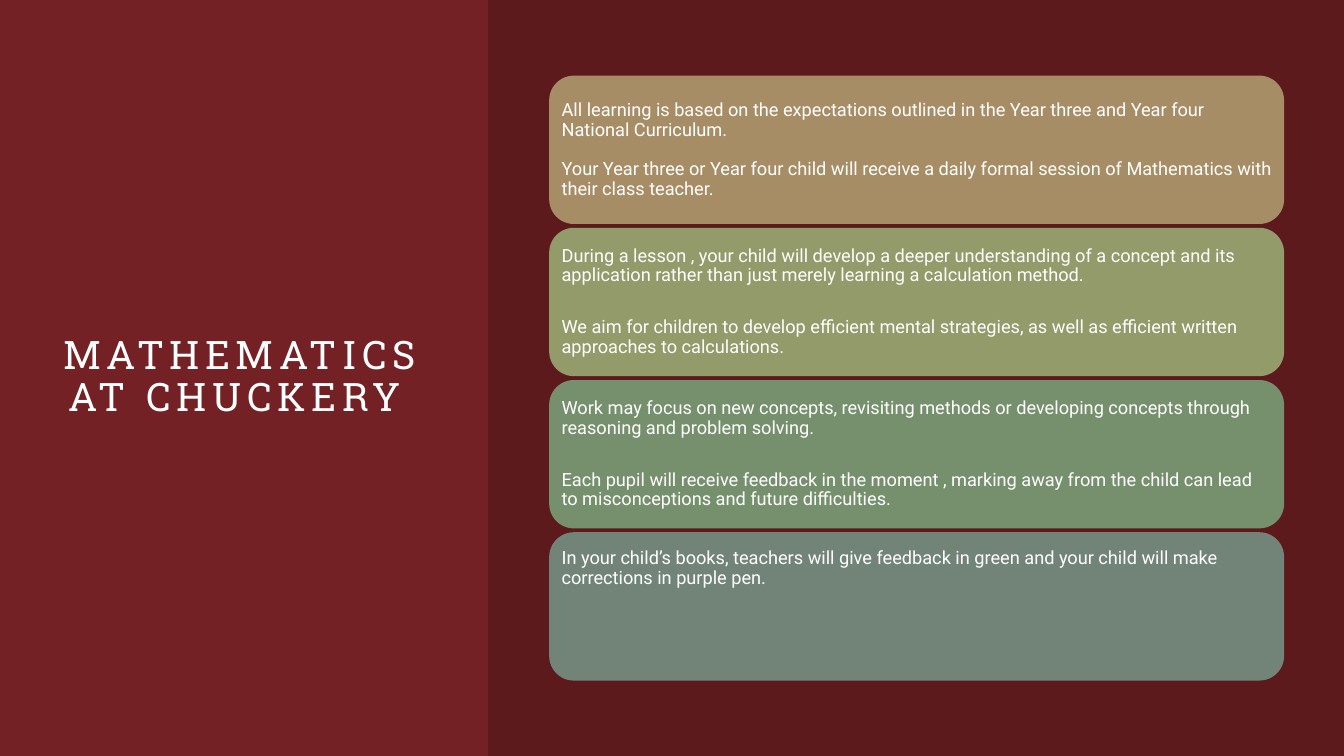
"""Build the slide on how mathematics is taught at Chuckery."""
from lxml.etree import SubElement
from pptx import Presentation
from pptx.dml.color import RGBColor
from pptx.enum.shapes import MSO_SHAPE
from pptx.enum.text import MSO_ANCHOR, PP_ALIGN
from pptx.oxml.ns import qn
from pptx.util import Pt

COLORS = {
    "background": "732124",
    "panel": "000000",
    "text": "FFFFFF",
    "curriculum": "A68D65",
    "lesson": "929B69",
    "feedback": "768F6D",
    "books": "728377",
}
CARDS = [
    ("curriculum", MSO_ANCHOR.MIDDLE, 3.75, 14, [
        "All learning is based on the expectations outlined in the Year three and Year four National Curriculum.",
        "Your Year three or Year four child will receive a daily formal session of Mathematics with their class teacher.",
    ]),
    ("lesson", MSO_ANCHOR.MIDDLE, 3.75, 23, [
        "During a lesson , your child will develop a deeper understanding of a concept and its application "
        "rather than just merely learning a calculation method.",
        "We aim for children to develop efficient mental strategies, as well as efficient written approaches "
        "to calculations.",
    ]),
    ("feedback", MSO_ANCHOR.MIDDLE, 3.75, 23, [
        "Work may focus on new concepts, revisiting methods or developing concepts through reasoning "
        "and problem solving.",
        "Each pupil will receive feedback in the moment , marking away from the child can lead "
        "to misconceptions and future difficulties.",
    ]),
    ("books", MSO_ANCHOR.TOP, 7, 0, [
        "In your child’s books, teachers will give feedback in green and your child will make corrections "
        "in purple pen.",
    ]),
]
CARD_TOP, CARD_HEIGHT, CARD_PITCH = 54, 106, 108.72


def add_block(preset, left, top, width, height, color):
    block = slide.shapes.add_shape(preset, Pt(left), Pt(top), Pt(width), Pt(height))
    block.shadow.inherit = False
    block.fill.solid()
    block.fill.fore_color.rgb = RGBColor.from_string(COLORS[color])
    block.line.fill.background()
    return block


def write_text(frame, texts, font, size, align, anchor, insets, gap=0):
    left, top, right, bottom = insets
    frame_format = {
        "word_wrap": True, "vertical_anchor": anchor,
        "margin_left": Pt(left), "margin_top": Pt(top),
        "margin_right": Pt(right), "margin_bottom": Pt(bottom),
    }
    for attribute, value in frame_format.items():
        setattr(frame, attribute, value)
    for index, text in enumerate(texts):
        paragraph = frame.add_paragraph() if index else frame.paragraphs[0]
        paragraph_format = {"alignment": align, "line_spacing": 0.9, "space_before": Pt(gap if index else 0)}
        for attribute, value in paragraph_format.items():
            setattr(paragraph, attribute, value)
        run = paragraph.add_run()
        run.text = text
        for attribute, value in {"name": font, "size": Pt(size)}.items():
            setattr(run.font, attribute, value)
        run.font.color.rgb = RGBColor.from_string(COLORS["text"])


presentation = Presentation()
presentation.slide_width, presentation.slide_height = Pt(960), Pt(540)
slide = presentation.slides.add_slide(presentation.slide_layouts[6])
slide.background.fill.solid()
slide.background.fill.fore_color.rgb = RGBColor.from_string(COLORS["background"])

title = slide.shapes.add_textbox(Pt(42.5), Pt(85), Pt(261.4), Pt(369.4))
write_text(title.text_frame, ["MATHEMATICS AT CHUCKERY "], "Roboto Slab", 28,
           PP_ALIGN.CENTER, MSO_ANCHOR.MIDDLE, (0, 0, 0, 0))
title.text_frame.paragraphs[0].runs[0].font._element.set("spc", "400")

panel = add_block(MSO_SHAPE.RECTANGLE, 348.5, 0, 611.5, 540, "panel")
panel_color = panel._element.spPr.find(qn("a:solidFill")).find(qn("a:srgbClr"))
SubElement(panel_color, qn("a:alpha"), val="20000")

for row, (topic, anchor, top_inset, gap, texts) in enumerate(CARDS):
    card = add_block(MSO_SHAPE.ROUNDED_RECTANGLE, 392.25, CARD_TOP + row * CARD_PITCH, 525, CARD_HEIGHT, topic)
    write_text(card.text_frame, texts, "Roboto", 13, PP_ALIGN.LEFT, anchor,
               (3.75, top_inset, 3.75, 3.75), gap)

presentation.save("out.pptx")
